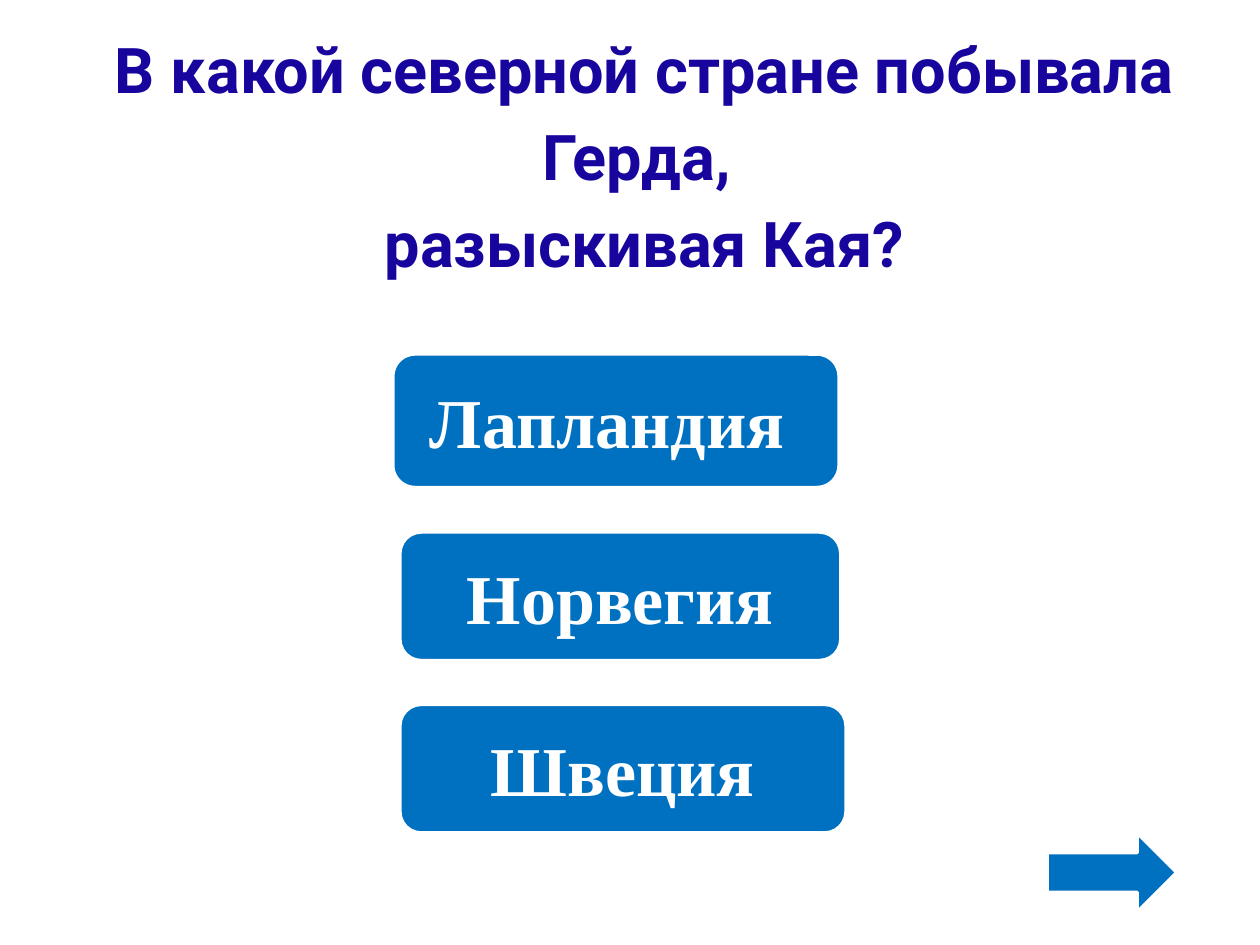
from typing import NamedTuple

from pptx import Presentation
from pptx.dml.color import RGBColor
from pptx.enum.shapes import MSO_SHAPE
from pptx.enum.text import MSO_ANCHOR, MSO_AUTO_SIZE, PP_ALIGN
from pptx.util import Pt

COLORS = {"title": "17059D", "fill": "0070C0", "white": "FFFFFF"}


class Block(NamedTuple):
    kind: MSO_SHAPE
    left: float
    top: float
    width: float
    height: float
    text: str = ""


BLOCKS = [
    Block(MSO_SHAPE.ROUNDED_RECTANGLE, 228.5, 304, 252, 73.5, "Норвегия"),
    Block(MSO_SHAPE.ROUNDED_RECTANGLE, 228.5, 402.5, 255, 73.5, "Швеция"),
    Block(MSO_SHAPE.ROUNDED_RECTANGLE, 224.5, 202.3, 255, 76.3, "Лапландия "),
    Block(MSO_SHAPE.RIGHT_ARROW, 598.3, 475.9, 74.2, 45.4),
]
TITLE = ["В какой северной стране побывала Герда, ", "разыскивая Кая?"]


def color(name: str) -> RGBColor:
    return RGBColor.from_string(COLORS[name])


def add_run(para, text: str, face: str, size: float, tint: str) -> None:
    para.alignment = PP_ALIGN.CENTER
    run = para.add_run()
    run.text = text
    font = run.font
    font.name, font.size, font.bold = face, Pt(size), True
    font.color.rgb = color(tint)


def add_title(slide) -> None:
    title = slide.shapes.title
    title.left, title.top = Pt(31), Pt(7.2)
    title.width, title.height = Pt(674.6), Pt(157.7)
    frame = title.text_frame
    frame.word_wrap = True
    frame.auto_size = MSO_AUTO_SIZE.NONE
    frame.vertical_anchor = MSO_ANCHOR.TOP
    for i, line in enumerate(TITLE):
        para = frame.add_paragraph() if i else frame.paragraphs[0]
        para.line_spacing = 1.15
        add_run(para, line, "Roboto", 36, "title")


def add_block(slide, block: Block) -> None:
    shape = slide.shapes.add_shape(
        block.kind, Pt(block.left), Pt(block.top),
        Pt(block.width), Pt(block.height))
    shape.shadow.inherit = False
    shape.fill.solid()
    shape.fill.fore_color.rgb = color("fill")
    shape.line.color.rgb = color("white")
    shape.line.width = Pt(2)
    if block.text:
        frame = shape.text_frame
        frame.vertical_anchor = MSO_ANCHOR.MIDDLE
        add_run(frame.paragraphs[0], block.text, "Times New Roman", 40, "white")


def main() -> None:
    deck = Presentation()
    deck.slide_width, deck.slide_height = Pt(720), Pt(540)
    slide = deck.slides.add_slide(deck.slide_layouts[5])
    add_title(slide)
    for block in BLOCKS:
        add_block(slide, block)
    deck.save("out.pptx")


if __name__ == "__main__":
    main()
